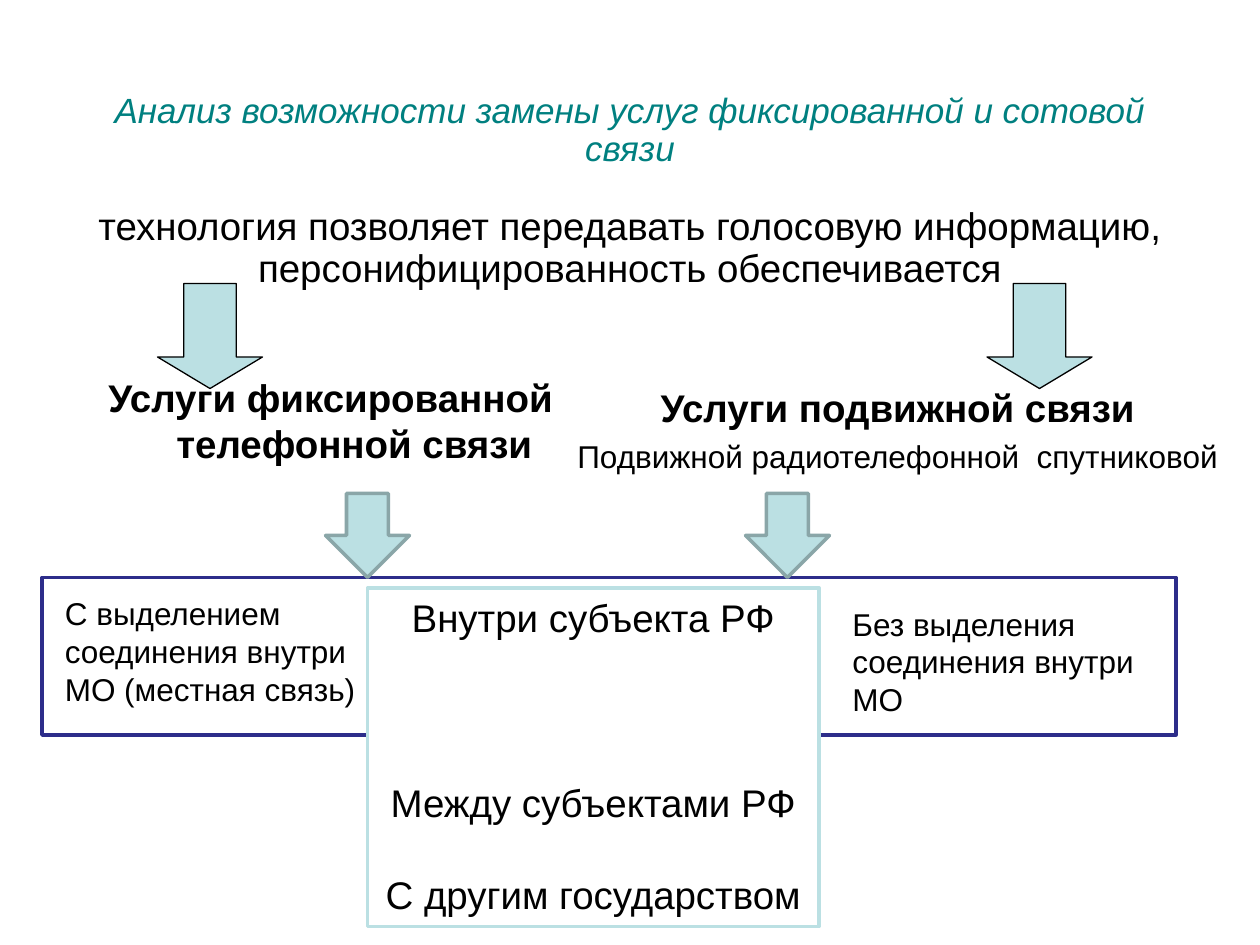
"""Builds the slide comparing fixed and mobile telephone services."""
from dataclasses import dataclass

import pptx
import pptx.dml.color
import pptx.enum.shapes
import pptx.enum.text
import pptx.util

PX = 9525
ALIGN = pptx.enum.text.PP_ALIGN
ANCHOR = pptx.enum.text.MSO_ANCHOR
SHAPE = pptx.enum.shapes.MSO_SHAPE


@dataclass(frozen=True)
class Theme:
    font: str = "Arial"
    black: str = "000000"
    white: str = "FFFFFF"
    teal: str = "008080"
    aqua: str = "BBE0E3"
    grey_aqua: str = "8AA6A8"
    navy: str = "2D2D8A"
    title: int = 20
    large: int = 22
    small: int = 18
    thin: float = 0.75
    thick: float = 2


THEME = Theme()


@dataclass(frozen=True)
class Box:
    left: int
    top: int
    width: int
    height: int

    def emu(self) -> tuple:
        return tuple(n * PX for n in (self.left, self.top, self.width, self.height))


@dataclass(frozen=True)
class Line:
    text: str
    size: int = THEME.large
    bold: bool = False
    italic: bool = False
    color: str = THEME.black
    align: ALIGN = ALIGN.CENTER
    before: float = 0
    spacing: float = 1.0
    hanging: int = 0


@dataclass(frozen=True)
class Figure:
    kind: SHAPE
    box: Box
    fill: str
    outline: str
    weight: float
    adjustments: tuple = ()


@dataclass(frozen=True)
class Label:
    box: Box
    lines: tuple


def rgb(value: str) -> pptx.dml.color.RGBColor:
    return pptx.dml.color.RGBColor.from_string(value)


def write(frame, lines: tuple, anchor: ANCHOR = ANCHOR.TOP) -> None:
    frame.word_wrap = True
    frame.auto_size = pptx.enum.text.MSO_AUTO_SIZE.NONE
    frame.vertical_anchor = anchor
    for index, line in enumerate(lines):
        paragraph = frame.paragraphs[0] if index == 0 else frame.add_paragraph()
        paragraph.text = line.text
        paragraph.alignment = line.align
        paragraph.line_spacing = line.spacing
        paragraph.space_before = pptx.util.Pt(line.before)
        if line.hanging:
            properties = paragraph._p.get_or_add_pPr()
            properties.set("marL", str(line.hanging * PX))
            properties.set("indent", str(-line.hanging * PX))
        font = paragraph.font
        font.name = THEME.font
        font.size = pptx.util.Pt(line.size)
        font.bold = line.bold
        font.italic = line.italic
        font.color.rgb = rgb(line.color)


def draw_figure(slide, figure: Figure):
    shape = slide.shapes.add_shape(figure.kind, *figure.box.emu())
    shape.shadow.inherit = False
    shape.fill.solid()
    shape.fill.fore_color.rgb = rgb(figure.fill)
    shape.line.color.rgb = rgb(figure.outline)
    shape.line.width = pptx.util.Pt(figure.weight)
    for index, value in enumerate(figure.adjustments):
        shape.adjustments[index] = value
    return shape


def draw_label(slide, label: Label) -> None:
    write(slide.shapes.add_textbox(*label.box.emu()).text_frame, label.lines)


def heading(text: str) -> Line:
    return Line(text, bold=True, before=4.4, hanging=36)


def note(text: str) -> Line:
    return Line(text, size=THEME.small, align=ALIGN.LEFT)


TITLE_BOX = Box(48, 29, 864, 235)
TITLE = (
    Line("Анализ возможности замены услуг фиксированной и сотовой связи",
         size=THEME.title, italic=True, color=THEME.teal, spacing=0.9),
    Line("технология позволяет передавать голосовую информацию, "
         "персонифицированность обеспечивается", before=22, spacing=0.9),
)
SERVICES = (
    Label(Box(40, 280, 424, 88), (heading("Услуги фиксированной телефонной связи"),)),
    Label(Box(424, 288, 520, 80), (
        heading("Услуги подвижной связи"),
        Line("Подвижной радиотелефонной  спутниковой",
             size=THEME.small, before=3.6, hanging=36))),
)
LOCAL_FRAME = Figure(SHAPE.RECTANGLE, Box(32, 440, 864, 120),
                     THEME.white, THEME.navy, THEME.thick)
CONNECTION_FRAME = Figure(SHAPE.RECTANGLE, Box(280, 448, 344, 258),
                          THEME.white, THEME.aqua, THEME.thick)
CONNECTIONS = (
    Line("Внутри субъекта РФ"),
    Line("Между субъектами РФ", before=79),
    Line("С другим государством", before=26.4),
)
NOTES = (
    Label(Box(640, 456, 272, 97), (note("Без выделения соединения внутри МО"),)),
    Label(Box(40, 448, 248, 97),
          (note("С выделением соединения внутри МО (местная связь)"),)),
)
UPPER_ARROWS = tuple(
    Figure(SHAPE.DOWN_ARROW, Box(left, 216, 80, 80),
           THEME.aqua, THEME.black, THEME.thin, (0.5, 0.3))
    for left in (120, 752))
LOWER_ARROWS = tuple(
    Figure(SHAPE.DOWN_ARROW, Box(left, 376, 64, 64),
           THEME.aqua, THEME.grey_aqua, THEME.thick)
    for left in (248, 568))


def main() -> None:
    presentation = pptx.Presentation()
    presentation.slide_width, presentation.slide_height = 960 * PX, 720 * PX
    slide = presentation.slides.add_slide(presentation.slide_layouts[5])

    draw_figure(slide, LOCAL_FRAME)
    title = slide.shapes.title
    title.left, title.top, title.width, title.height = TITLE_BOX.emu()
    write(title.text_frame, TITLE, ANCHOR.MIDDLE)
    for label in SERVICES:
        draw_label(slide, label)
    for arrow in UPPER_ARROWS:
        draw_figure(slide, arrow)
    write(draw_figure(slide, CONNECTION_FRAME).text_frame, CONNECTIONS)
    for label in NOTES:
        draw_label(slide, label)
    for arrow in LOWER_ARROWS:
        draw_figure(slide, arrow)

    presentation.save("out.pptx")


if __name__ == "__main__":
    main()
